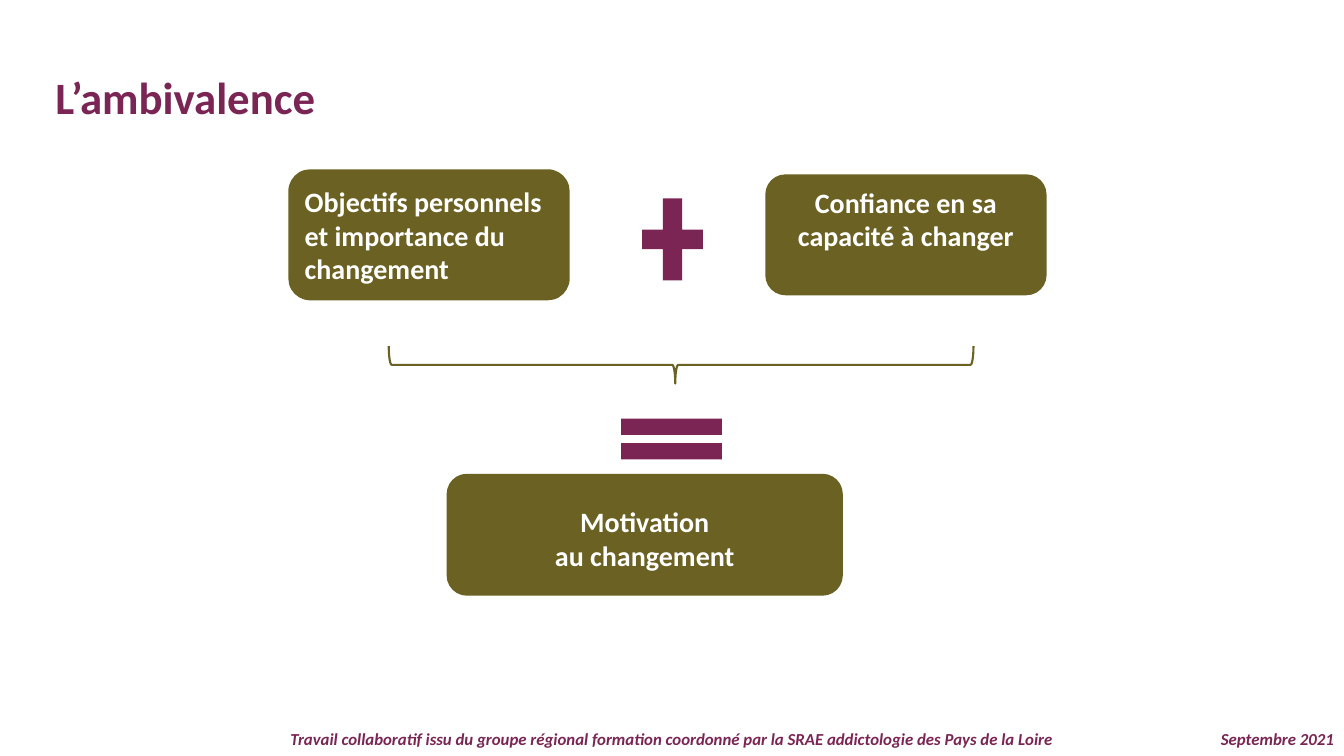
from pptx import Presentation
from pptx.dml.color import RGBColor
from pptx.enum.shapes import MSO_SHAPE
from pptx.enum.text import MSO_ANCHOR, PP_ALIGN
from pptx.util import Emu, Pt

PX = 9144  # one px is a hundredth of an inch
PLUM = RGBColor(0x7A, 0x25, 0x53)
OLIVE = RGBColor(0x6B, 0x61, 0x23)
WHITE = RGBColor(0xFF, 0xFF, 0xFF)


def px(*lengths):
    return [Emu(length * PX) for length in lengths]


def write(frame, text, size=20, color=WHITE, italic=False, align=PP_ALIGN.CENTER,
          anchor=MSO_ANCHOR.TOP, top=5, spacing=None):
    """Fill a text frame, one paragraph per line of text."""
    frame.word_wrap = True
    frame.vertical_anchor = anchor
    frame.margin_left, frame.margin_right = px(10, 10)
    frame.margin_top, frame.margin_bottom = px(top, 5)
    frame.text = text
    for paragraph in frame.paragraphs:
        paragraph.alignment = align
        paragraph.line_spacing = spacing
        font = paragraph.font
        font.name, font.size = "Calibri", Pt(size)
        font.bold, font.italic = True, italic
        font.color.rgb = color


class SlideBuilder:
    def __init__(self, slide):
        self.slide = slide

    def title(self, text, *box):
        heading = self.slide.shapes.title
        heading.left, heading.top, heading.width, heading.height = px(*box)
        write(heading.text_frame, text, size=32, color=PLUM,
              align=PP_ALIGN.LEFT, anchor=MSO_ANCHOR.MIDDLE)

    def footer(self, text, *box, align=PP_ALIGN.CENTER):
        note = self.slide.shapes.add_textbox(*px(*box))
        write(note.text_frame, text, size=12, color=PLUM, italic=True,
              align=align, spacing=0.9)

    def solid(self, kind, color, *box):
        shape = self.slide.shapes.add_shape(kind, *px(*box))
        shape.shadow.inherit = False
        shape.fill.solid()
        shape.fill.fore_color.rgb = color
        shape.line.fill.background()
        return shape

    def card(self, text, *box, **style):
        card = self.solid(MSO_SHAPE.ROUNDED_RECTANGLE, OLIVE, *box)
        write(card.text_frame, text, **style)

    def brace(self, *box):
        brace = self.slide.shapes.add_shape(MSO_SHAPE.RIGHT_BRACE, *px(*box))
        brace.shadow.inherit = False
        brace.rotation = 90
        brace.adjustments[0] = 0.08
        brace.adjustments[1] = 0.51
        brace.fill.background()
        brace.line.color.rgb = OLIVE
        brace.line.width = Pt(1.5)


def main():
    deck = Presentation()
    deck.slide_width, deck.slide_height = px(1333, 750)
    builder = SlideBuilder(deck.slides.add_slide(deck.slide_layouts[5]))

    # Title and footers
    builder.title("L’ambivalence", 45, 64, 1280, 64)
    builder.footer("Travail collaboratif issu du groupe régional formation coordonné "
                   "par la SRAE addictologie des Pays de la Loire", 0, 720, 1333, 30)
    builder.footer("Septembre 2021", 1175, 720, 158, 30, align=PP_ALIGN.RIGHT)

    # Objectives plus confidence
    builder.card("Objectifs personnels et importance du changement",
                 286, 168, 279, 130, align=PP_ALIGN.LEFT, anchor=MSO_ANCHOR.MIDDLE)
    builder.solid(MSO_SHAPE.MATH_PLUS, PLUM, 626, 182, 82, 111)
    builder.card("Confiance en sa capacité à changer", 759, 173, 279, 120)

    # Equals motivation
    builder.brace(657, 72, 37, 580)
    builder.card("Motivation\nau changement", 443, 470, 393, 121, top=25)
    builder.solid(MSO_SHAPE.MATH_EQUAL, PLUM, 598, 401, 136, 69)

    deck.save("out.pptx")


if __name__ == "__main__":
    main()
